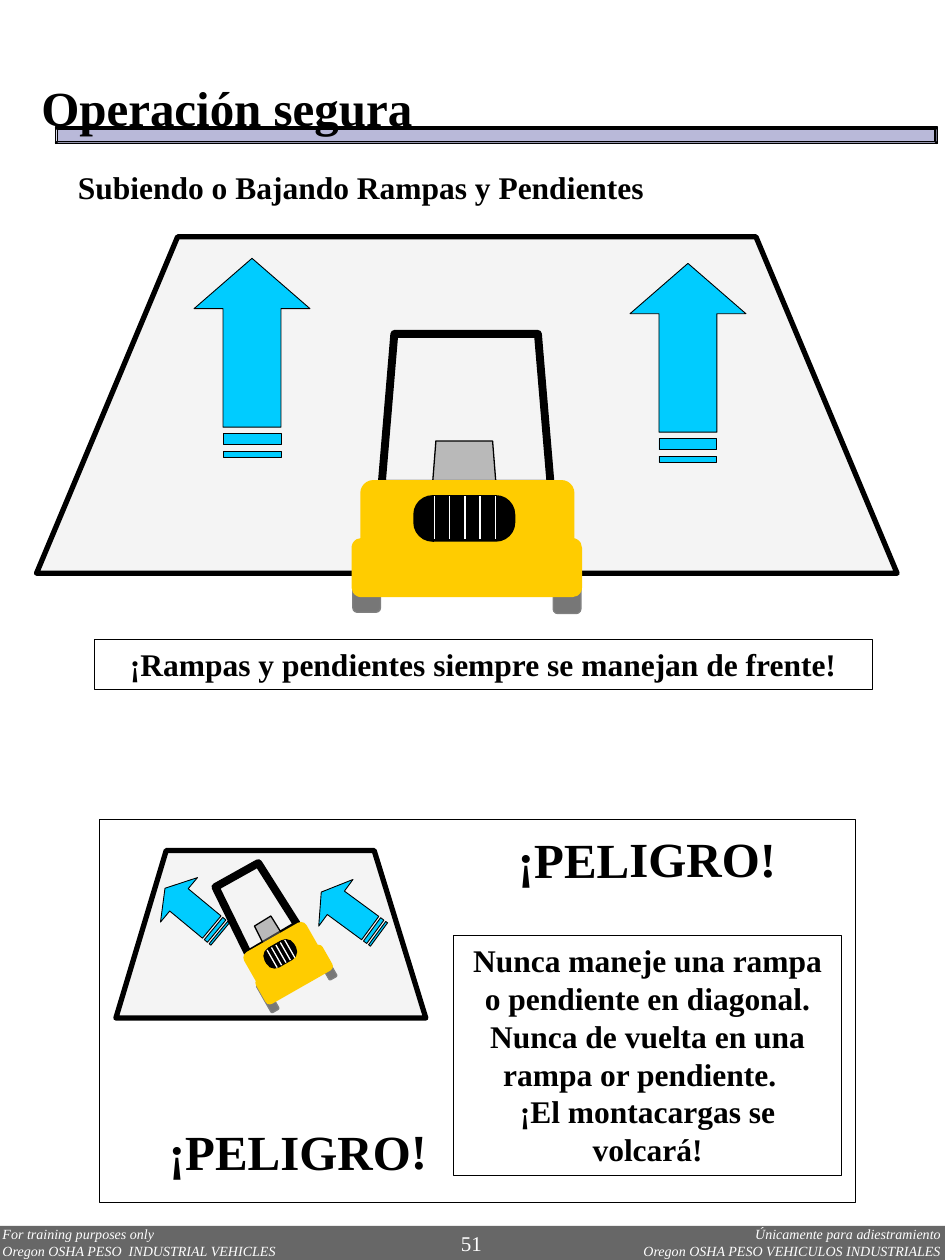
from dataclasses import dataclass
from math import cos, radians, sin
from typing import Optional

from lxml import etree
from pptx import Presentation
from pptx.dml.color import RGBColor
from pptx.enum.shapes import MSO_CONNECTOR, MSO_SHAPE
from pptx.enum.text import MSO_ANCHOR, PP_ALIGN
from pptx.oxml.ns import qn
from pptx.util import Inches, Pt

# The slide is a grid of one-inch cells: columns across, rows down.
COLUMNS, ROWS = 7.5, 10
CELL = Inches(1)
FONT = "Times New Roman"
LEFT, CENTER, RIGHT = PP_ALIGN.LEFT, PP_ALIGN.CENTER, PP_ALIGN.RIGHT
TOP, MIDDLE = MSO_ANCHOR.TOP, MSO_ANCHOR.MIDDLE
RECTANGLE, ROUNDED, BEVEL = MSO_SHAPE.RECTANGLE, MSO_SHAPE.ROUNDED_RECTANGLE, MSO_SHAPE.BEVEL
STRAIGHT = MSO_CONNECTOR.STRAIGHT
BLACK, WHITE, YELLOW, CYAN = "000000", "FFFFFF", "FFCC00", "00CCFF"
TIRE, TIRE_EDGE, RAMP, BAR = "777777", "808080", "EAEAEA", "B9B9D9"
FOOTER = "676767"

Point = tuple[float, float]
Outline = list[Point]


@dataclass
class Box:
    left: float
    top: float
    width: float
    height: float
    rotation: float = 0


@dataclass
class Caption:
    box: Box
    lines: list[str]
    size: float
    align: PP_ALIGN = LEFT
    color: str = BLACK
    bold: bool = True
    italic: bool = False
    inset: Point = (0.1, 0.05)
    anchor: MSO_ANCHOR = TOP
    spacing: Optional[float] = None
    border: float = 0


@dataclass
class Arrow:
    tip: Point
    angle: float = 0
    length_scale: float = 1
    width_scale: float = 1


@dataclass
class Forklift:
    wheels: list[Box]
    cage: Outline
    seat: Outline
    bodies: list[Box]
    grille: Box
    slat: tuple[Point, Point]
    slat_step: Point
    axle: Optional[tuple[Point, Point]] = None


RAMPS: list[Outline] = [
    [(0.29, 4.55), (1.41, 1.88), (6, 1.88), (7.12, 4.55)],
    [(0.92, 8.08), (1.32, 6.75), (2.97, 6.75), (3.38, 8.08)],
]
ARROWS = [
    Arrow((2, 2.05)),
    Arrow((5.46, 2.09)),
    Arrow((1.31, 7.05), -50.3, 0.36, 0.5),
    Arrow((2.55, 7.08), -53.7, 0.36, 0.5),
]
TILT = 330.3
FORKLIFTS = [
    Forklift(
        wheels=[Box(2.8, 4.35, 0.22, 0.51), Box(4.39, 4.36, 0.22, 0.51)],
        cage=[(4.37, 3.84), (4.27, 2.65), (3.13, 2.65), (3.03, 3.84)],
        seat=[(3.95, 4.01), (3.91, 3.5), (3.46, 3.5), (3.42, 4.01)],
        bodies=[Box(2.79, 4.27, 1.83, 0.47), Box(2.86, 3.81, 1.7, 0.62)],
        grille=Box(3.28, 3.93, 0.81, 0.37),
        slat=((3.45, 3.94), (3.45, 4.28)),
        slat_step=(0.12, 0),
    ),
    Forklift(
        wheels=[Box(2.09, 7.79, 0.07, 0.25, TILT), Box(2.55, 7.53, 0.07, 0.25, TILT)],
        cage=[(2.36, 7.34), (2.05, 6.85), (1.71, 7.04), (1.97, 7.57)],
        seat=[(2.28, 7.48), (2.15, 7.27), (2.02, 7.35), (2.13, 7.57)],
        bodies=[Box(1.95, 7.42, 0.57, 0.3, TILT), Box(2.03, 7.62, 0.61, 0.23, TILT)],
        grille=Box(2.09, 7.48, 0.27, 0.18, TILT),
        slat=((2.12, 7.54), (2.2, 7.68)),
        slat_step=(0.035, -0.02),
        axle=((2.15, 7.89), (2.55, 7.66)),
    ),
]
FOOTERS = [
    Caption(Box(4.07, 9.73, 3.4, 0.27),
            ["Únicamente para adiestramiento", "Oregon OSHA PESO VEHICULOS INDUSTRIALES"],
            8, RIGHT, WHITE, bold=False, italic=True, inset=(0, 0)),
    Caption(Box(0.02, 9.73, 3.34, 0.27),
            ["For training purposes only", "Oregon OSHA PESO  INDUSTRIAL VEHICLES"],
            8, LEFT, WHITE, bold=False, italic=True, inset=(0, 0)),
    Caption(Box(3.56, 9.72, 0.54, 0.3), ["51"], 12, LEFT, WHITE, bold=False),
]
CAPTIONS = [
    Caption(Box(0.23, 0.57, 6.19, 0.57), ["Operación segura"], 28),
    Caption(Box(0.52, 1.3, 5.33, 0.39), ["Subiendo o Bajando Rampas y Pendientes"], 18,
            anchor=MIDDLE, spacing=0.95),
    Caption(Box(0.75, 5.07, 6.17, 0.4),
            ["¡Rampas y pendientes siempre se manejan de frente!"], 18, CENTER, border=0.25),
    Caption(Box(3.6, 7.42, 3.08, 1.91),
            ["Nunca maneje una rampa o pendiente en diagonal.",
             "Nunca de vuelta en una rampa or pendiente.  ",
             "¡El montacargas se volcará!"], 18, CENTER, border=0.25),
    Caption(Box(3.64, 6.53, 2.99, 0.57, 359.8), ["¡PELIGRO!"], 28, CENTER),
    Caption(Box(0.87, 8.85, 2.99, 0.57, 359.8), ["¡PELIGRO!"], 28, CENTER),
]


def rgb(color: str) -> RGBColor:
    return RGBColor.from_string(color)


def cells(*lengths: float) -> list[int]:
    return [round(length * CELL) for length in lengths]


def paint(shape, fill: str = "", line: str = "", weight: float = 0, opacity: int = 100) -> None:
    shape.shadow.inherit = False
    if fill:
        shape.fill.solid()
        shape.fill.fore_color.rgb = rgb(fill)
        if opacity < 100:
            color = shape.fill._xPr.find(qn("a:solidFill"))[0]
            etree.SubElement(color, qn("a:alpha")).set("val", str(opacity * 1000))
    else:
        shape.fill.background()
    if line:
        shape.line.color.rgb = rgb(line)
        shape.line.width = Pt(weight)
    else:
        shape.line.fill.background()


def draw_box(slide, box: Box, kind: MSO_SHAPE, *style, corner: Optional[float] = None):
    shape = slide.shapes.add_shape(kind, *cells(box.left, box.top, box.width, box.height))
    shape.rotation = box.rotation
    if corner is not None:
        shape.adjustments[0] = corner
    paint(shape, *style)
    return shape


def draw_outlines(slide, outlines: list[Outline], *style) -> None:
    builder = slide.shapes.build_freeform(*cells(*outlines[0][0]), scale=1.0)
    for index, outline in enumerate(outlines):
        if index:
            builder.move_to(*cells(*outline[0]))
        builder.add_line_segments([cells(*point) for point in outline[1:]], close=True)
    paint(builder.convert_to_shape(), *style)


def draw_line(slide, start: Point, end: Point, color: str, weight: float) -> None:
    connector = slide.shapes.add_connector(STRAIGHT, *cells(*start, *end))
    connector.line.color.rgb = rgb(color)
    connector.line.width = Pt(weight)
    etree.SubElement(connector._element.spPr, qn("a:effectLst"))


def draw_arrow(slide, arrow: Arrow) -> None:
    """Draw an arrow with two tail bars, turned clockwise from upward about its tip."""
    cosine, sine = cos(radians(arrow.angle)), sin(radians(arrow.angle))

    def place(across: float, along: float) -> Point:
        x, y = across * arrow.width_scale, along * arrow.length_scale
        return arrow.tip[0] + x * cosine - y * sine, arrow.tip[1] + x * sine + y * cosine

    stem, wing, head = 0.23, 0.46, 0.4
    outlines = [[(-wing, head), (-stem, head), (-stem, 1.34), (stem, 1.34),
                 (stem, head), (wing, head), (0, 0)]]
    for near, far in ((1.39, 1.48), (1.53, 1.58)):
        outlines.append([(-stem, far), (stem, far), (stem, near), (-stem, near)])
    placed = [[place(*point) for point in outline] for outline in outlines]
    draw_outlines(slide, placed, CYAN, BLACK, 0.5)


def draw_forklift(slide, forklift: Forklift) -> None:
    for wheel in forklift.wheels:
        draw_box(slide, wheel, ROUNDED, TIRE, TIRE_EDGE, 0.75, corner=0.167)
    draw_outlines(slide, [forklift.cage], "", BLACK, 4.5)
    draw_outlines(slide, [forklift.seat], TIRE_EDGE, BLACK, 0.75, 50)
    if forklift.axle:
        draw_line(slide, *forklift.axle, TIRE_EDGE, 6)
    for body in forklift.bodies:
        draw_box(slide, body, ROUNDED, YELLOW, corner=0.167)
    draw_box(slide, forklift.grille, ROUNDED, BLACK, corner=0.416)
    step_x, step_y = forklift.slat_step
    for index in range(5):
        start, end = [(x + index * step_x, y + index * step_y) for x, y in forklift.slat]
        draw_line(slide, start, end, WHITE, 0.75)


def draw_caption(slide, caption: Caption) -> None:
    box = caption.box
    if caption.border:
        shape = draw_box(slide, box, RECTANGLE, "", BLACK, caption.border)
    else:
        shape = slide.shapes.add_textbox(*cells(box.left, box.top, box.width, box.height))
        shape.rotation = box.rotation
    frame = shape.text_frame
    frame.word_wrap = True
    frame.vertical_anchor = caption.anchor
    frame.margin_left = frame.margin_right = Inches(caption.inset[0])
    frame.margin_top = frame.margin_bottom = Inches(caption.inset[1])
    for index, line in enumerate(caption.lines):
        paragraph = frame.add_paragraph() if index else frame.paragraphs[0]
        paragraph.alignment = caption.align
        paragraph.line_spacing = caption.spacing
        run = paragraph.add_run()
        run.text = line
        font = run.font
        font.name, font.size, font.color.rgb = FONT, Pt(caption.size), rgb(caption.color)
        font.bold, font.italic = caption.bold, caption.italic


def main() -> None:
    presentation = Presentation()
    presentation.slide_width, presentation.slide_height = cells(COLUMNS, ROWS)
    slide = presentation.slides.add_slide(presentation.slide_layouts[6])
    draw_box(slide, Box(0, 9.73, COLUMNS, 0.27), RECTANGLE, FOOTER)
    draw_box(slide, Box(0.44, 1.01, 7, 0.13), BEVEL, BAR, BLACK, 1, corner=0.125)
    for ramp in RAMPS:
        draw_outlines(slide, [ramp], RAMP, BLACK, 3, 50)
    for arrow in ARROWS:
        draw_arrow(slide, arrow)
    for forklift in FORKLIFTS:
        draw_forklift(slide, forklift)
    draw_box(slide, Box(0.79, 6.5, 6, 3.04), RECTANGLE, "", BLACK, 0.5)
    for caption in FOOTERS + CAPTIONS:
        draw_caption(slide, caption)
    presentation.save("out.pptx")


if __name__ == "__main__":
    main()
